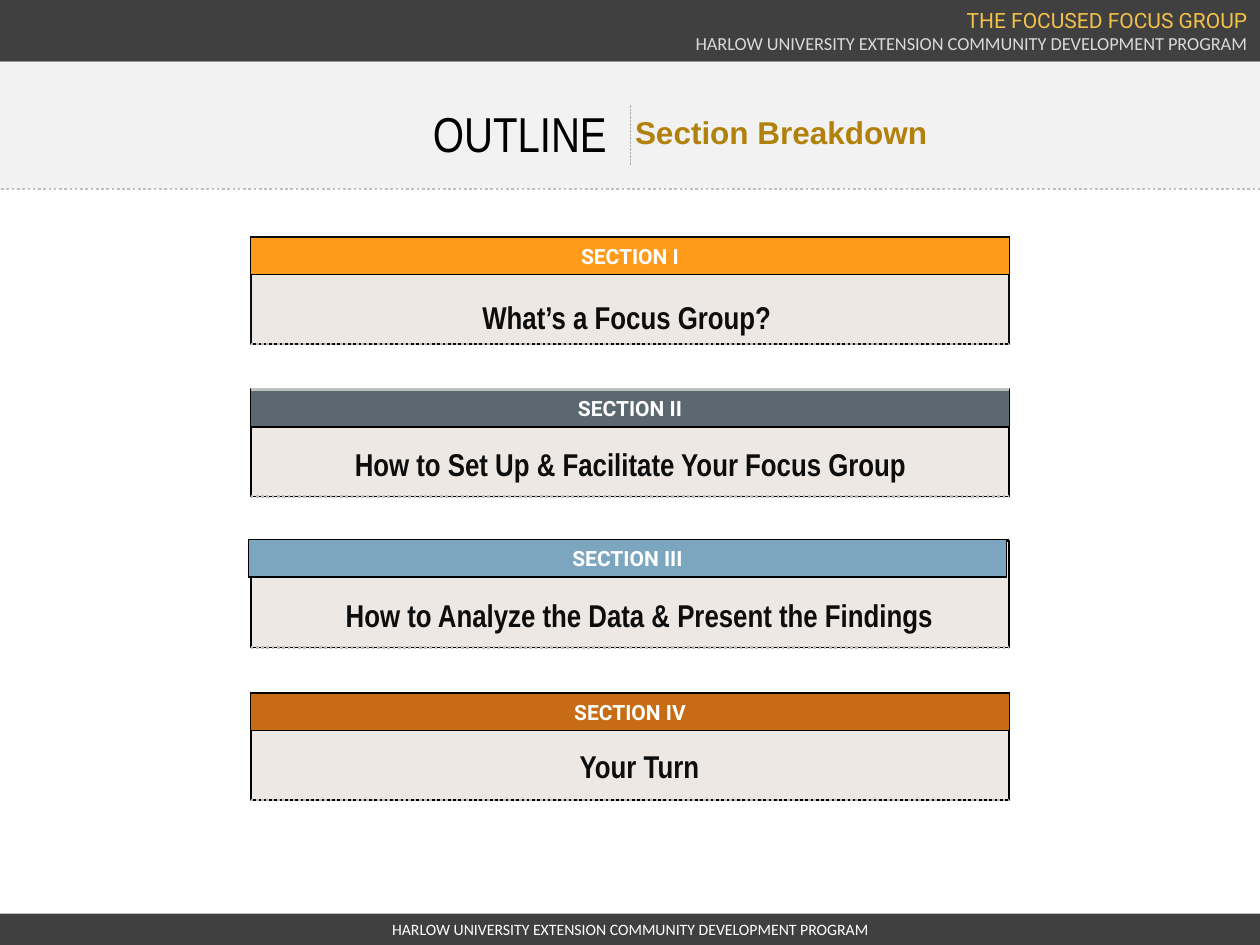
from lxml import etree
from pptx import Presentation
from pptx.dml.color import RGBColor
from pptx.enum import dml, shapes, text
from pptx.oxml.ns import qn
from pptx.util import Inches, Pt

WHITE = RGBColor(0xFF, 0xFF, 0xFF)
BLACK = RGBColor(0, 0, 0)
INK = RGBColor(0x0D, 0x0D, 0x0D)
CHARCOAL = RGBColor(0x40, 0x40, 0x40)
PALE = RGBColor(0xF2, 0xF2, 0xF2)
CARD = RGBColor(0xED, 0xE8, 0xE3)
RULE = RGBColor(0xBF, 0xBF, 0xBF)
DIVIDER = RGBColor(0xAF, 0xAB, 0xAB)
SILVER = RGBColor(0xD9, 0xD9, 0xD9)
YELLOW = RGBColor(0xF4, 0xC2, 0x49)
GOLD = RGBColor(0xB1, 0x81, 0x0B)
ORANGE = RGBColor(0xFF, 0x9B, 0x1A)
SLATE = RGBColor(0x5B, 0x68, 0x70)
BLUE = RGBColor(0x7C, 0xA6, 0xC0)
RUST = RGBColor(0xC7, 0x6C, 0x14)

PROGRAM = "HARLOW UNIVERSITY EXTENSION COMMUNITY DEVELOPMENT PROGRAM"
CARD_LEFT, CARD_WIDTH, CARD_HEIGHT, HEADER_HEIGHT = 1.99, 6.02, 0.85, 0.3

SECTIONS = [
    dict(label="SECTION I", title="What’s a Focus Group?", top=1.88, color=ORANGE,
         edge=INK, rule=INK, title_box=(2.23, 2.32, 5.49, 0.4),
         header_at=(1.99, 1.88), rule_on_top=True),
    dict(label="SECTION II", title="How to Set Up & Facilitate Your Focus Group", top=3.09,
         color=SLATE, edge=BLACK, rule=RULE, title_box=(2.26, 3.48, 5.49, 0.4),
         header_at=(1.99, 3.09), rule_on_top=True),
    dict(label="SECTION III", title="How to Analyze the Data & Present the Findings", top=4.29,
         color=BLUE, edge=BLACK, rule=BLACK, title_box=(1.85, 4.68, 6.45, 0.4),
         header_at=(1.97, 4.28), rule_on_top=False),
    dict(label="SECTION IV", title="Your Turn", top=5.5, color=RUST,
         edge=BLACK, rule=RULE, title_box=(1.85, 5.88, 6.45, 0.4),
         header_at=(1.99, 5.5), rule_on_top=False),
]

BANDS = [
    (0, -0.04, 10.01, 0.53, CHARCOAL),
    (0, 0.49, 10.09, 1.01, PALE),
]

CENTER, RIGHT = text.PP_ALIGN.CENTER, text.PP_ALIGN.RIGHT
HEADINGS = [
    ("THE FOCUSED FOCUS GROUP", (3.56, 0.01, 6.44, 0.3), "Roboto", 12, YELLOW, False, RIGHT),
    (PROGRAM, (3.47, 0.21, 6.53, 0.28), "Calibri", 10.5, SILVER, False, RIGHT),
    ("OUTLINE", (1.38, 0.77, 5.49, 0.57), "Arial Narrow", 28, BLACK, False, CENTER),
    ("Section Breakdown", (2.5, 0.85, 7.4, 0.4), "Arial", 18, GOLD, True, CENTER),
]

prs = Presentation()
prs.slide_width, prs.slide_height = Inches(10), Inches(7.5)
slide = prs.slides.add_slide(prs.slide_layouts[6])


def write(frame, words, font, size, color, bold=False, align=CENTER):
    frame.word_wrap = True
    frame.text = words
    paragraph = frame.paragraphs[0]
    paragraph.alignment = align
    style = paragraph.runs[0].font
    style.name, style.size, style.bold = font, Pt(size), bold
    style.color.rgb = color


def add_label(words, box, *style):
    label = slide.shapes.add_textbox(*map(Inches, box))
    write(label.text_frame, words, *style)


def add_block(left, top, width, height, fill, edge=None, weight=1):
    block = slide.shapes.add_shape(
        shapes.MSO_SHAPE.RECTANGLE, *map(Inches, (left, top, width, height)))
    block.shadow.inherit = False
    block.fill.solid()
    block.fill.fore_color.rgb = fill
    if edge is None:
        block.line.fill.background()
    else:
        block.line.color.rgb = edge
        block.line.width = Pt(weight)
    block.text_frame.vertical_anchor = text.MSO_ANCHOR.MIDDLE
    return block


def add_rule(x1, y1, x2, y2, color, weight=1.5, dash=None):
    rule = slide.shapes.add_connector(
        shapes.MSO_CONNECTOR.STRAIGHT, *map(Inches, (x1, y1, x2, y2)))
    rule.line.color.rgb = color
    rule.line.width = Pt(weight)
    if dash is not None:
        rule.line.dash_style = dash
    etree.SubElement(rule._element.spPr, qn("a:effectLst"))


def add_section(section):
    top, right = section["top"], CARD_LEFT + CARD_WIDTH
    bottom = top + CARD_HEIGHT

    def add_header():
        header = add_block(*section["header_at"], CARD_WIDTH, HEADER_HEIGHT,
                           section["color"], BLACK, 0.75)
        write(header.text_frame, section["label"], "Roboto", 12, WHITE, True)

    def add_top_rule():
        add_rule(CARD_LEFT, top, right, top, section["rule"])

    add_block(CARD_LEFT, top, CARD_WIDTH, CARD_HEIGHT, CARD, section["edge"])
    add_label(section["title"], section["title_box"], "Arial Narrow", 18, INK, True)
    add_rule(CARD_LEFT, bottom, right, bottom, RULE, dash=dml.MSO_LINE.ROUND_DOT)
    layers = [add_header, add_top_rule]
    for add_layer in layers if section["rule_on_top"] else reversed(layers):
        add_layer()


for band in BANDS:
    add_block(*band)
for heading in HEADINGS:
    add_label(*heading)
add_rule(0.01, 1.5, 10.01, 1.5, RULE, dash=dml.MSO_LINE.ROUND_DOT)
add_rule(5, 1.31, 5, 0.83, DIVIDER, 0.5, dml.MSO_LINE.SQUARE_DOT)

for section in SECTIONS:
    add_section(section)

footer = add_block(0, 7.25, 10, 0.25, CHARCOAL)
write(footer.text_frame, PROGRAM, "Calibri", 9, WHITE)

prs.save("out.pptx")
